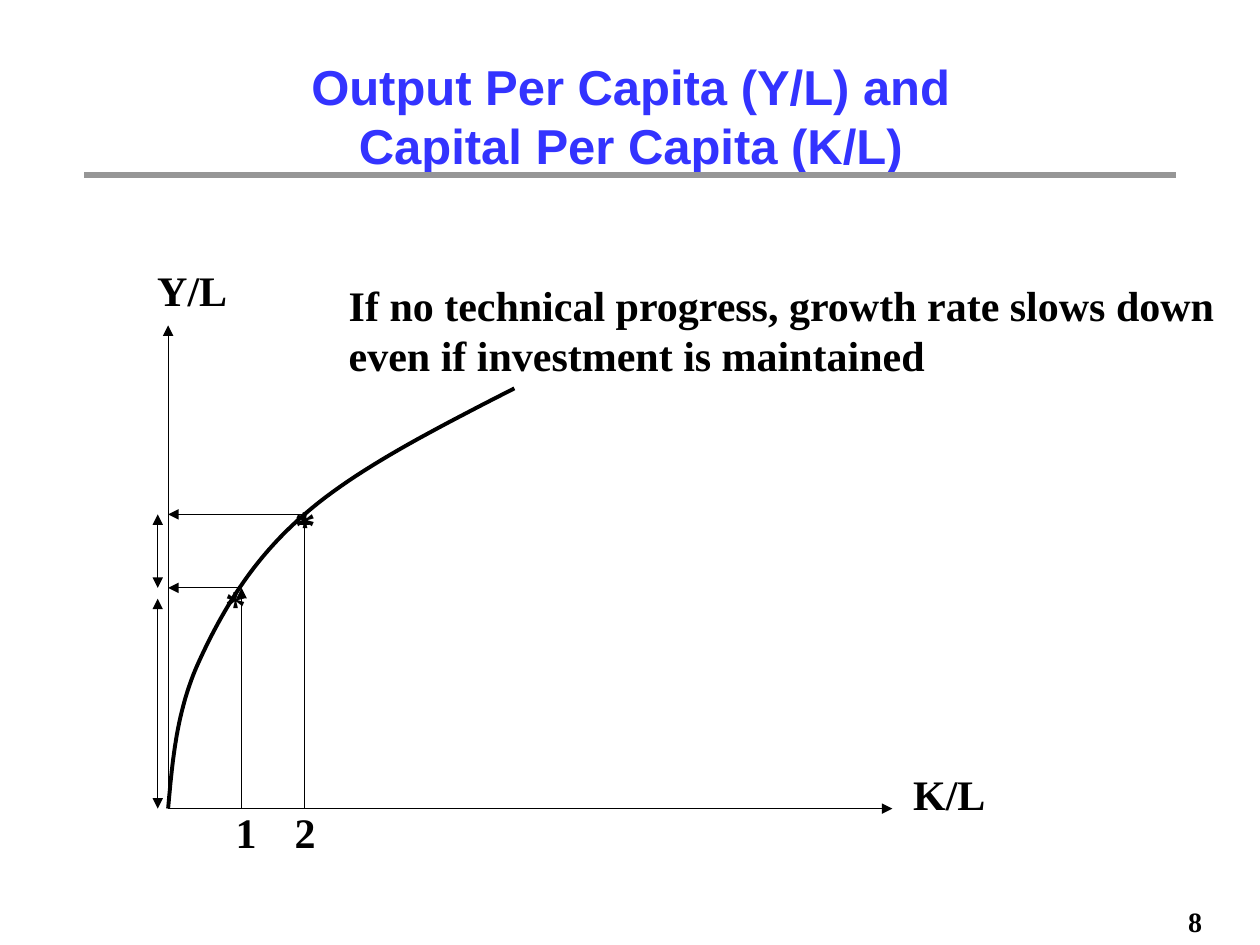
from lxml import etree
from pptx import Presentation
from pptx import util as u
from pptx.dml.color import RGBColor
from pptx.enum import shapes, text
from pptx.oxml.ns import qn

BLACK, BLUE, GREY = "000000", "3333FF", "969696"


def add_line(start, end, color=BLACK, width=0.75, arrows=("tailEnd",)):
    """Draw a straight line in cm; tailEnd is the arrowhead at its end."""
    line = slide.shapes.add_connector(
        shapes.MSO_CONNECTOR.STRAIGHT, *(u.Cm(value) for value in start + end))
    line.line.color.rgb = RGBColor.from_string(color)
    line.line.width = u.Pt(width)
    for arrow in arrows:
        etree.SubElement(line.line._get_or_add_ln(), qn(f"a:{arrow}"), type="triangle")
    etree.SubElement(line._element.spPr, qn("a:effectLst"))


def format_text(shape, color, font_name, size, alignment):
    for paragraph in shape.text_frame.paragraphs:
        paragraph.alignment = alignment
        paragraph.font.name = font_name
        paragraph.font.size = u.Pt(size)
        paragraph.font.bold = True
        paragraph.font.color.rgb = RGBColor.from_string(color)


presentation = Presentation()
presentation.slide_width, presentation.slide_height = u.Cm(25.4), u.Cm(19.05)
slide = presentation.slides.add_slide(presentation.slide_layouts[5])

# Title and rule
add_line((1.7, 3.53), (23.7, 3.53), GREY, 3, arrows=())
title = slide.shapes.title
title.left, title.top, title.width, title.height = u.Cm(1.3), u.Cm(1.14), u.Cm(22.83), u.Cm(2.36)
title.text_frame.text = "Output Per Capita (Y/L) and\vCapital Per Capita (K/L)"
title.text_frame.auto_size = text.MSO_AUTO_SIZE.NONE
title.text_frame.vertical_anchor = text.MSO_ANCHOR.MIDDLE
format_text(title, BLUE, "Arial", 28, text.PP_ALIGN.CENTER)

# Axes
origin_x, origin_y = 3.39, 16.3
origin = (origin_x, origin_y)
add_line(origin, (origin_x, 6.56))
add_line(origin, (17.99, origin_y))

# Production curve, sampled from cubic Bezier segments
point_1, point_2 = (4.87, 11.85), (6.14, 10.37)
segments = [
    (origin, (3.48, 15.32), (3.56, 14.33), (4.01, 13.34)),
    ((4.01, 13.34), (4.47, 12.34), (5.08, 11.28), point_2),
    (point_2, (7.19, 9.45), (8.79, 8.64), (10.37, 7.83)),
]
steps = 24
curve_points = []
for segment in segments:
    for step in range(1, steps + 1):
        t = step / steps
        weights = ((1 - t) ** 3, 3 * t * (1 - t) ** 2, 3 * t ** 2 * (1 - t), t ** 3)
        curve_points.append(tuple(
            u.Cm(sum(weight * point[axis] for weight, point in zip(weights, segment)))
            for axis in (0, 1)))
builder = slide.shapes.build_freeform(u.Cm(origin_x), u.Cm(origin_y))
builder.add_line_segments(curve_points, close=False)
curve = builder.convert_to_shape()
curve.shadow.inherit = False
curve.fill.background()
curve.line.color.rgb = RGBColor.from_string(BLACK)
curve.line.width = u.Pt(2.25)

# Guides from the capital axis to the curve and on to the output axis
for x, y in (point_1, point_2):
    add_line((x, origin_y), (x, y))
    add_line((x, y), (origin_x, y))

# Output gains beside the vertical axis
for bottom, top in ((origin_y, 12.07), (point_1[1], point_2[1])):
    add_line((3.18, bottom), (3.18, top), arrows=("headEnd", "tailEnd"))

# Labels: wording, left, top, width, height, size
labels = [
    ("Y/L", 2.92, 5.21, 1.93, 1.3, 24),
    ("K/L", 18.16, 15.37, 1.98, 1.3, 24),
    ("If no technical progress, growth rate slows down\neven if investment is maintained",
     6.78, 5.51, 18.14, 2.31, 24),
    ("1", 4.5, 16.13, 0.94, 1.27, 24),
    ("2", 5.69, 16.13, 0.94, 1.27, 24),
    ("*", 4.29, 11.53, 0.94, 1.27, 24),
    ("*", 5.69, 9.93, 0.94, 1.27, 24),
    ("8", 23.7, 18.11, 1.17, 0.94, 16),
]
for wording, left, top, width, height, size in labels:
    label = slide.shapes.add_textbox(u.Cm(left), u.Cm(top), u.Cm(width), u.Cm(height))
    label.text_frame.text = wording
    label.text_frame.word_wrap = False
    label.text_frame.auto_size = text.MSO_AUTO_SIZE.SHAPE_TO_FIT_TEXT
    format_text(label, BLACK, "Times New Roman", size, text.PP_ALIGN.LEFT)

presentation.save("out.pptx")
